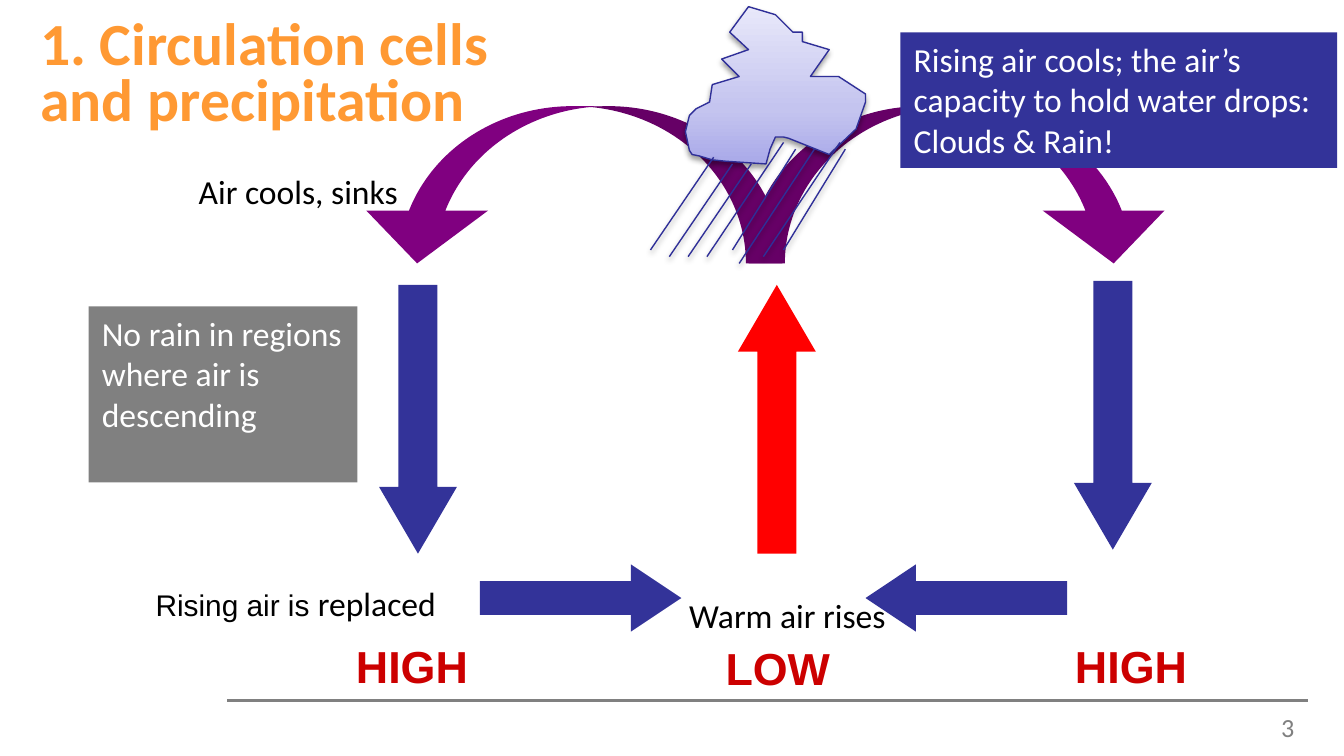
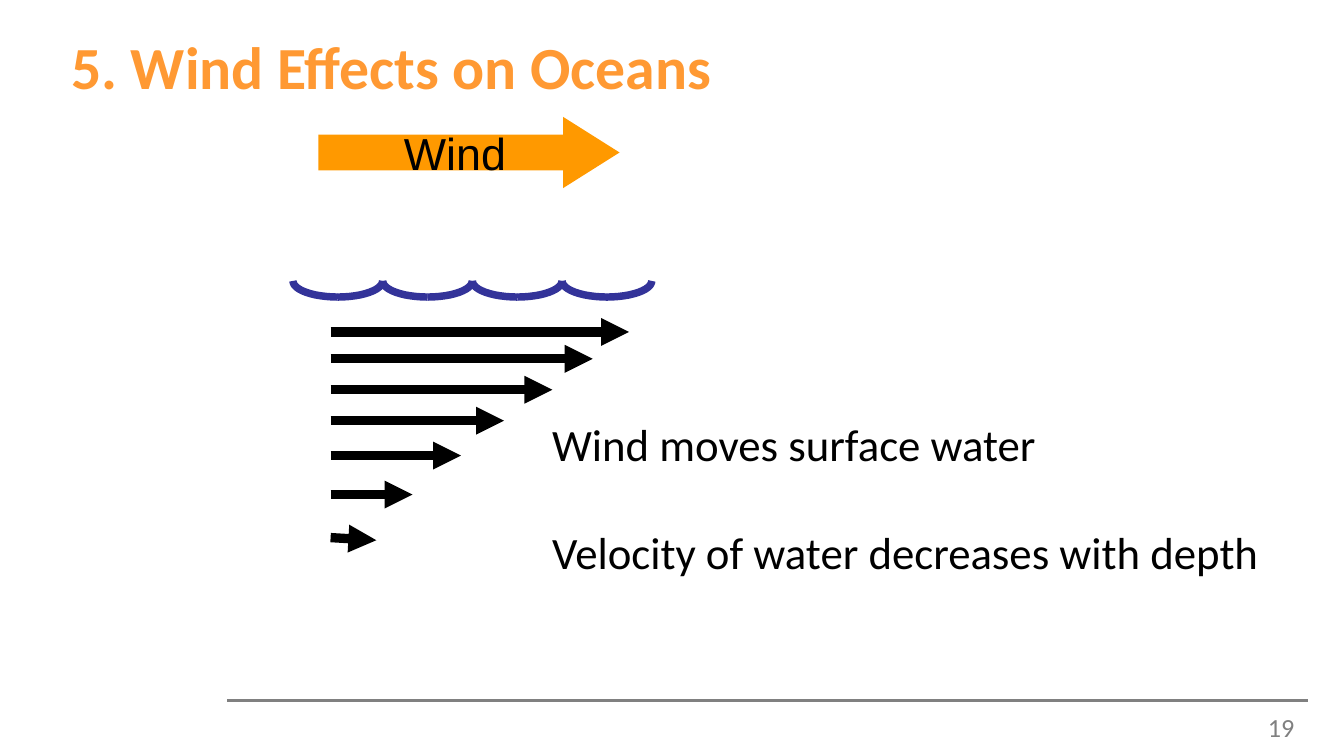
import copy
import dataclasses
import math

import lxml.etree
import pptx
import pptx.dml.color
import pptx.enum.shapes
import pptx.enum.text
import pptx.oxml.ns
import pptx.util

Inches = pptx.util.Inches
Pt = pptx.util.Pt
RGBColor = pptx.dml.color.RGBColor
SHAPE = pptx.enum.shapes.MSO_SHAPE
ALIGN = pptx.enum.text.PP_ALIGN
ANCHOR = pptx.enum.text.MSO_ANCHOR
AUTO_SIZE = pptx.enum.text.MSO_AUTO_SIZE
qn = pptx.oxml.ns.qn

ORANGE = RGBColor(0xFF, 0x99, 0x33)
WIND_ORANGE = RGBColor(0xFF, 0x99, 0x00)
GRAY = RGBColor(0x80, 0x80, 0x80)
PURPLE = RGBColor(0x80, 0x00, 0x80)
BLUE = RGBColor(0x33, 0x33, 0x99)
RAIN_BLUE = RGBColor(0x2F, 0x2F, 0x98)
RED = RGBColor(0xFF, 0x00, 0x00)
DARK_RED = RGBColor(0xCC, 0x00, 0x00)
BLACK = RGBColor(0x00, 0x00, 0x00)
WHITE = RGBColor(0xFF, 0xFF, 0xFF)
CLOUD_STOPS = [
    (0, RGBColor(0xA9, 0xA9, 0xE9)),
    (0.35, RGBColor(0xC4, 0xC4, 0xEF)),
    (1, RGBColor(0xE8, 0xE8, 0xFA)),
]
CURVE = [0.231, 0.775, 0.336]
VERTICAL = [0.5, 0.857]
HORIZONTAL = [0.5, 0.75]


@dataclasses.dataclass
class Box:
    """Region of a slide, in inches."""
    left: float
    top: float
    width: float
    height: float

    def point(self, x, y):
        """Return a point of the region as slide lengths."""
        return Inches(self.left + x), Inches(self.top + y)

    def inner(self, x, y, width, height):
        """Return a smaller region placed inside this one."""
        return Box(self.left + x, self.top + y, width, height)

    def lengths(self):
        """Return left, top, width and height as lengths."""
        return [Inches(value) for value in dataclasses.astuple(self)]


def format_font(font, size, color, name="Calibri", bold=False):
    """Set the face, size and colour of a font."""
    font.name, font.size, font.bold = name, Pt(size), bold
    font.color.rgb = color


def write(shape, lines, size, color, name="Calibri", bold=False, align=ALIGN.LEFT):
    """Write one paragraph per line and return the text frame."""
    frame = shape.text_frame
    frame.text = "\n".join(lines)
    for paragraph in frame.paragraphs:
        paragraph.alignment = align
        format_font(paragraph.font, size, color, name, bold)
    return frame


def add_text(slide, box, lines, size, color, wrap=False, **style):
    """Add a text box."""
    shape = slide.shapes.add_textbox(*box.lengths())
    frame = write(shape, lines, size, color, **style)
    frame.word_wrap = wrap
    frame.auto_size = AUTO_SIZE.NONE if wrap else AUTO_SIZE.SHAPE_TO_FIT_TEXT
    return frame


def add_filled(slide, kind, box, color, adjustments=()):
    """Add a flat preset shape without outline."""
    shape = slide.shapes.add_shape(kind, *box.lengths())
    shape.shadow.inherit = False
    shape.fill.solid()
    shape.fill.fore_color.rgb = color
    shape.line.fill.background()
    for index, value in enumerate(adjustments):
        shape.adjustments[index] = value
    return shape


def add_line(shapes, start, end, color, width, arrow=False):
    """Add a straight line, with an arrowhead if asked, and return its effect list."""
    line = shapes.add_connector(pptx.enum.shapes.MSO_CONNECTOR.STRAIGHT, *start, *end)
    line.line.color.rgb = color
    line.line.width = Pt(width)
    properties = line._element.spPr
    if arrow:
        outline = properties.find(qn("a:ln"))
        lxml.etree.SubElement(outline, qn("a:tailEnd"), type="triangle")
    return lxml.etree.SubElement(properties, qn("a:effectLst"))


def add_outline(shapes, points, color, width, close):
    """Add a freeform through the given points."""
    builder = shapes.build_freeform(*points[0], scale=1.0)
    builder.add_line_segments(points[1:], close=close)
    shape = builder.convert_to_shape()
    shape.shadow.inherit = False
    shape.line.color.rgb = color
    shape.line.width = Pt(width)
    return shape


def add_soft_shadow(effects):
    """Fill an effect list with a soft shadow below the shape."""
    shadow = lxml.etree.SubElement(
        effects, qn("a:outerShdw"), blurRad=str(Pt(3.1)), dist=str(Pt(1.6)),
        dir="5400000", rotWithShape="0")
    color = lxml.etree.SubElement(shadow, qn("a:srgbClr"), val=str(BLACK))
    lxml.etree.SubElement(color, qn("a:alpha"), val="38000")


def add_framed_slide(presentation, title_box, title, number, line_spacing=None):
    """Add a slide with its title, footer rule and page number."""
    slide = presentation.slides.add_slide(presentation.slide_layouts[5])
    shape = slide.shapes.title
    shape.left, shape.top, shape.width, shape.height = title_box.lengths()
    frame = write(shape, [title], 32, ORANGE, bold=True)
    frame.vertical_anchor = ANCHOR.MIDDLE
    frame.auto_size = AUTO_SIZE.NONE
    frame.paragraphs[0].line_spacing = line_spacing
    footer = Box(1.69, 5.21, 8.04, 0.34)
    add_line(slide.shapes, footer.point(0, 0), footer.point(footer.width, 0), GRAY, 1.5)
    add_text(slide, footer.inner(6.07, 0.03, 1.97, 0.31), [number], 14, GRAY,
             wrap=True, align=ALIGN.RIGHT)
    return slide


def draw_air_flow(slide, box):
    """Draw the arrows of the two circulation cells."""
    for x, rotation in ((4.07, 270), (1.15, 90)):
        arrow = add_filled(slide, SHAPE.CURVED_RIGHT_ARROW,
                           box.inner(x, -0.21, 1.17, 3.17), PURPLE, CURVE)
        arrow.rotation = rotation
        if rotation == 270:
            arrow._element.spPr.find(qn("a:xfrm")).set("flipH", "1")
    for kind, x, y, color in (
        (SHAPE.UP_ARROW, 2.99, 2.12, RED),
        (SHAPE.DOWN_ARROW, 5.49, 2.09, BLUE),
        (SHAPE.DOWN_ARROW, 0.32, 2.12, BLUE),
    ):
        add_filled(slide, kind, box.inner(x, y, 0.58, 2), color, VERTICAL)
    for kind, x in ((SHAPE.LEFT_ARROW, 3.94), (SHAPE.RIGHT_ARROW, 1.07)):
        add_filled(slide, kind, box.inner(x, 4.2, 1.5, 0.5), BLUE, HORIZONTAL)


def label_air_flow(slide, box):
    """Name the movements of air and the pressure zones."""
    add_text(slide, box.inner(3.97, 3.16, 1.68, 0.4), ["Warm air rises"], 18, BLACK)
    add_text(slide, box.inner(0.32, 0, 1.7, 0.4), ["Air cools, sinks"], 18, BLACK)
    frame = add_text(slide, box.inner(0, 3.07, 2.31, 0.4), ["Rising air is "], 16, BLACK)
    paragraph = frame.paragraphs[0]
    paragraph.add_run().text = "replaced"
    for run, size, name in zip(paragraph.runs, (16, 18), ("Arial", "Calibri")):
        format_font(run.font, size, BLACK, name)
    for text, x, y in (("HIGH", 1.49, 3.48), ("HIGH", 6.84, 3.48), ("LOW", 4.24, 3.5)):
        add_text(slide, box.inner(x, y, 1.05, 0.5), [text], 24, DARK_RED,
                 name="Arial", bold=True)


def add_note(slide, box, color, lines):
    """Add a filled note with white text."""
    shape = add_filled(slide, SHAPE.RECTANGLE, box, color)
    frame = write(shape, lines, 18, WHITE)
    frame.vertical_anchor = ANCHOR.TOP
    frame.word_wrap = True


def draw_rain_cloud(slide, box):
    """Draw a shaded cloud with slanted rain below it."""
    outline = [
        (0.44, 0.71), (0.34, 0.76), (0.29, 0.81), (0.26, 0.93), (0.29, 1.07),
        (0.31, 1.1), (0.36, 1.11), (0.46, 1.14), (0.56, 1.15), (0.86, 1.17),
        (0.89, 1.06), (0.93, 0.97), (0.99, 0.97), (1.03, 0.98), (1.33, 1.1),
        (1.53, 0.91), (1.6, 0.71), (1.6, 0.65), (1.4, 0.52), (1.19, 0.52),
        (1.33, 0.32), (1.13, 0.26), (1.13, 0.19), (1.06, 0.19), (0.93, 0.06),
        (0.73, 0), (0.59, 0.19), (0.73, 0.32), (0.53, 0.39), (0.66, 0.52),
        (0.46, 0.58),
    ]
    rain = [
        (0.61, 1.17, 0.14, 1.86), (0.75, 1.17, 0.28, 1.86), (0.99, 1.01, 0.42, 1.86),
        (1.08, 1.06, 0.61, 1.81), (1.22, 1.06, 0.66, 1.91), (0.47, 1.12, 0, 1.81),
        (1.41, 1.01, 0.84, 1.86), (1.45, 1.06, 0.99, 1.81),
    ]
    shapes = slide.shapes.add_group_shape().shapes
    cloud = add_outline(shapes, [box.point(*point) for point in outline],
                        RAIN_BLUE, 0.75, True)
    cloud.fill.gradient()
    cloud.fill.gradient_angle = 90
    stop_list = cloud._element.spPr.find(qn("a:gradFill")).find(qn("a:gsLst"))
    stop_list.insert(1, copy.deepcopy(stop_list[0]))
    for stop, (position, color) in zip(cloud.fill.gradient_stops, CLOUD_STOPS):
        stop.position = position
        stop.color.rgb = color
    add_soft_shadow(cloud._element.spPr.find(qn("a:effectLst")))
    for x1, y1, x2, y2 in rain:
        add_soft_shadow(add_line(shapes, box.point(x1, y1), box.point(x2, y2),
                                 RAIN_BLUE, 0.75))


def draw_waves(slide, box, count=4, steps=12):
    """Draw a row of wave troughs, each made of two quarter ellipses."""
    radius = box.width / count / 2
    shapes = slide.shapes.add_group_shape().shapes
    for trough in range(count):
        center = radius * (2 * trough + 1)
        for side in (1, -1):
            angles = [math.pi / 2 * step / steps for step in range(steps + 1)]
            points = [box.point(center + side * radius * math.sin(angle),
                                box.height * math.cos(angle)) for angle in angles]
            add_outline(shapes, points, BLUE, 4, False).fill.background()


def draw_currents(slide, box):
    """Draw water velocity arrows that shorten with depth."""
    for depth, length, drop in (
        (0, 2.22, 0), (0.2, 1.95, 0), (0.43, 1.65, 0), (0.66, 1.29, 0),
        (0.92, 0.97, 0), (1.21, 0.61, 0), (1.53, 0.34, 0.02),
    ):
        add_line(slide.shapes, box.point(0, depth), box.point(length, depth + drop),
                 BLACK, 5, arrow=True)


def build_circulation_slide(presentation):
    """Build the slide on circulation cells and precipitation."""
    slide = add_framed_slide(presentation, Box(0.2, 0.32, 3.78, 0.52),
                             "1. Circulation cells \vand precipitation", "3", Pt(30))
    draw_air_flow(slide, Box(2.5, 0, 6.3, 4.7))
    label_air_flow(slide, Box(1.06, 1.22, 7.87, 4))
    add_note(slide, Box(6.7, 0.24, 3.25, 1.01), BLUE,
             ["Rising air cools; the air’s capacity to hold water drops: Clouds & Rain!"])
    add_note(slide, Box(0.66, 2.28, 2, 1.31), GRAY,
             ["No rain in regions", "where air is", "descending"])
    draw_rain_cloud(slide, Box(4.84, 0.05, 1.6, 1.91))


def build_ocean_slide(presentation):
    """Build the slide on wind effects on oceans."""
    slide = add_framed_slide(presentation, Box(0.43, 0.23, 9.21, 0.52),
                             "5. Wind Effects on Oceans", "19")
    draw_waves(slide, Box(2.18, 2.09, 2.67, 0.12))
    wind = add_filled(slide, SHAPE.RIGHT_ARROW, Box(2.37, 0.87, 2.24, 0.53),
                      WIND_ORANGE, [0.5, 0.792])
    frame = write(wind, ["Wind"], 24, BLACK, name="Arial", align=ALIGN.CENTER)
    frame.vertical_anchor = ANCHOR.MIDDLE
    frame.word_wrap = False
    draw_currents(slide, Box(2.46, 2.47, 2.22, 1.55))
    frame = add_text(slide, Box(4.01, 3.05, 5.84, 1.31),
                     ["Wind moves surface water", "Velocity of water decreases with depth"],
                     24, BLACK, wrap=True)
    frame.paragraphs[1].space_before = Pt(29)


def main():
    """Build and save the presentation."""
    presentation = pptx.Presentation()
    presentation.slide_width = Inches(10)
    presentation.slide_height = Inches(10 * 9 / 16)
    build_circulation_slide(presentation)
    build_ocean_slide(presentation)
    presentation.save("out.pptx")


if __name__ == "__main__":
    main()
